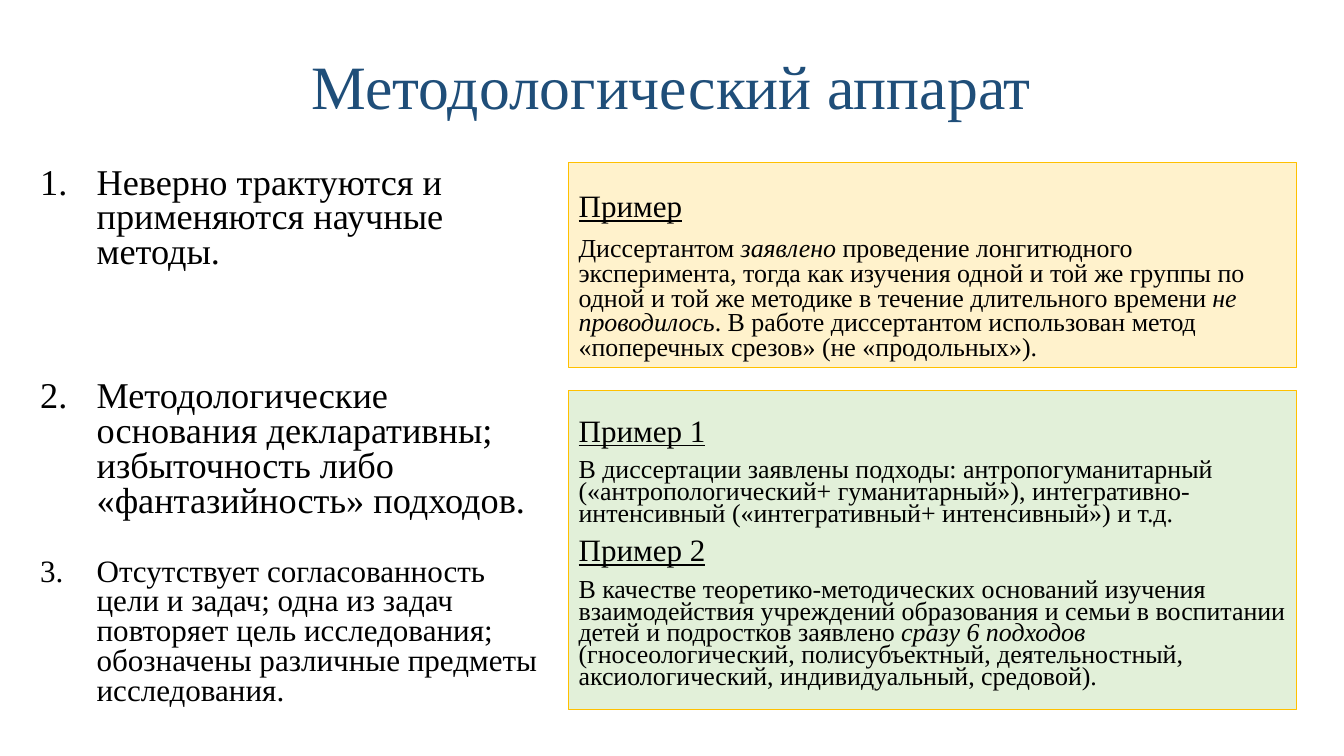
from pptx import Presentation
from pptx.dml.color import RGBColor
from pptx.enum import shapes, text
from pptx.oxml import ns
from pptx.util import Inches, Pt
from lxml import etree

FONT = "Times New Roman"
NAVY = RGBColor(0x1F, 0x4E, 0x79)
BLACK = RGBColor(0, 0, 0)
CREAM = RGBColor(0xFF, 0xF2, 0xCC)
GREEN = RGBColor(0xE2, 0xF0, 0xD9)
GOLD = RGBColor(0xFF, 0xC0, 0x00)

HEAD = {"size": Pt(22.2), "underline": True}
BODY = {"size": Pt(18.5)}

FLAWS = [
    ("Неверно трактуются и применяются научные методы.", 25.9, 0),
    ("Методологические основания декларативны; избыточность либо "
     "«фантазийность» подходов.", 25.9, 78),
    ("Отсутствует согласованность цели и задач; одна из задач повторяет цель "
     "исследования; обозначены различные предметы исследования.", 22.2, 27),
]
METHOD = [
    (HEAD, ["Пример"]),
    (BODY, ["Диссертантом ", "заявлено ",
            "проведение лонгитюдного эксперимента, тогда как изучения одной и той "
            "же группы по одной и той же методике в течение длительного времени ",
            "не проводилось",
            ". В работе диссертантом использован метод «поперечных срезов» "
            "(не «продольных»)."]),
]
BASIS = [
    (HEAD, ["Пример 1"]),
    (BODY, ["В диссертации заявлены подходы: антропогуманитарный "
            "(«антропологический+ гуманитарный»), интегративно-интенсивный "
            "(«интегративный+ интенсивный») и т.д."]),
    (HEAD, ["Пример 2"]),
    (BODY, ["В качестве теоретико-методических оснований изучения взаимодействия "
            "учреждений образования и семьи в воспитании детей и подростков заявлено ",
            "сразу 6 подходов",
            " (гносеологический, полисубъектный, деятельностный, аксиологический, "
            "индивидуальный, средовой)."]),
]


def style(item, values):
    for key, value in values.items():
        setattr(item, key, value)


def add_run(para, words, color=BLACK, **look):
    run = para.add_run()
    run.text = words
    style(run.font, {"name": FONT, **look})
    run.font.color.rgb = color


def add_para(frame, first, **look):
    para = frame.paragraphs[0] if first else frame.add_paragraph()
    style(para, look)
    return para


def add_box(slide, place):
    box = slide.shapes.add_textbox(*map(Inches, place))
    box.text_frame.word_wrap = True
    return box.text_frame


def add_title(slide, words):
    frame = add_box(slide, (0.91, 0.16, 11.5, 1.45))
    frame.vertical_anchor = text.MSO_ANCHOR.MIDDLE
    para = add_para(frame, True, alignment=text.PP_ALIGN.CENTER, line_spacing=0.9)
    add_run(para, words, NAVY, size=Pt(44))


def add_list(slide, items):
    frame = add_box(slide, (0.3, 1.61, 5.18, 6.08))
    for num, (words, size, gap) in enumerate(items, 1):
        para = add_para(frame, num == 1, line_spacing=0.8, space_before=Pt(gap))
        props = para._p.get_or_add_pPr()
        props.set("marL", str(Inches(0.56)))
        props.set("indent", str(-Inches(0.56)))
        etree.SubElement(props, ns.qn("a:buFont"), typeface="+mj-lt")
        etree.SubElement(props, ns.qn("a:buAutoNum"),
                         type="arabicPeriod", startAt=str(num))
        add_run(para, words, size=Pt(size))


def add_panel(slide, top, height, fill, spacing, paras):
    panel = slide.shapes.add_shape(
        shapes.MSO_SHAPE.RECTANGLE, *map(Inches, (5.64, top, 7.22, height)))
    panel.shadow.inherit = False
    panel.fill.solid()
    panel.fill.fore_color.rgb = fill
    panel.line.color.rgb = GOLD
    panel.line.width = Pt(0.5)
    frame = panel.text_frame
    style(frame, {"word_wrap": True, "margin_top": Inches(0.31),
                  "vertical_anchor": text.MSO_ANCHOR.TOP})
    for num, (look, parts) in enumerate(paras):
        para = add_para(frame, num == 0, alignment=text.PP_ALIGN.LEFT,
                        line_spacing=spacing, space_before=Pt(10 if num else 0))
        for spot, words in enumerate(parts):
            add_run(para, words, italic=spot % 2 == 1, **look)


def main():
    deck = Presentation()
    style(deck, {"slide_width": Inches(13.33), "slide_height": Inches(7.5)})
    slide = deck.slides.add_slide(deck.slide_layouts[6])
    add_title(slide, "Методологический аппарат")
    add_list(slide, FLAWS)
    add_panel(slide, 1.61, 2.04, CREAM, 0.8, METHOD)
    add_panel(slide, 3.87, 3.17, GREEN, 0.7, BASIS)
    deck.save("out.pptx")


if __name__ == "__main__":
    main()
